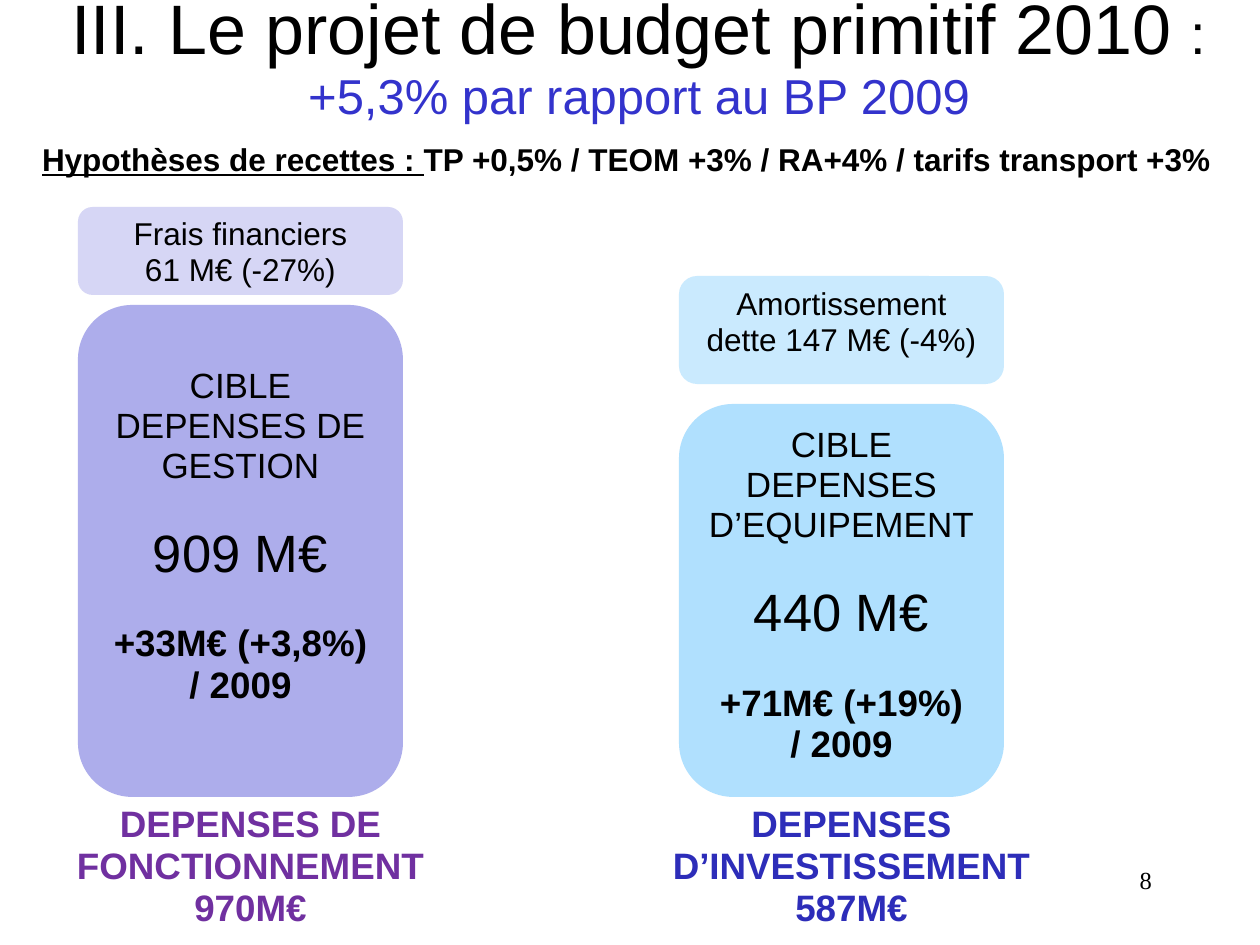
from dataclasses import dataclass

import pptx
import pptx.util
import pptx.dml.color
import pptx.enum.shapes
import pptx.enum.text

PX = 914400 / 126
ALIGN = pptx.enum.text.PP_ALIGN
ANCHOR = pptx.enum.text.MSO_ANCHOR


@dataclass(frozen=True)
class Theme:
    sans: str = "Arial"
    serif: str = "Times New Roman"
    black: str = "000000"
    subtitle: str = "3333CC"
    operating: str = "ADADEB"
    operating_light: str = "D6D6F5"
    operating_label: str = "7030A0"
    investment: str = "B0E0FE"
    investment_light: str = "CAEAFE"
    investment_label: str = "2D2DB9"
    title_size: int = 40
    colon_size: int = 32
    subtitle_size: int = 28
    amount_size: int = 30
    strong_size: int = 21
    body_size: int = 20
    small_size: int = 18
    number_size: int = 14
    line_spacing: float = 0.95
    gap: int = 22


THEME = Theme()


def px(value):
    return pptx.util.Emu(round(value * PX))


def color(value):
    return pptx.dml.color.RGBColor.from_string(value)


def set_font(font, size, rgb=THEME.black, bold=False, name=THEME.sans):
    font.name = name
    font.size = pptx.util.Pt(size)
    font.bold = bold
    font.color.rgb = color(rgb)


def prepare_frame(shape, top=6, anchor=ANCHOR.TOP):
    frame = shape.text_frame
    frame.word_wrap = True
    frame.vertical_anchor = anchor
    frame.margin_left = frame.margin_right = px(13)
    frame.margin_top, frame.margin_bottom = px(top), px(6)
    return frame


def add_text_box(slide, box, anchor=ANCHOR.TOP):
    shape = slide.shapes.add_textbox(*map(px, box))
    return prepare_frame(shape, anchor=anchor)


def add_block(slide, box, fill, top=6):
    kind = pptx.enum.shapes.MSO_SHAPE.ROUNDED_RECTANGLE
    shape = slide.shapes.add_shape(kind, *map(px, box))
    shape.shadow.inherit = False
    shape.adjustments[0] = 0.167
    shape.fill.solid()
    shape.fill.fore_color.rgb = color(fill)
    shape.line.fill.background()
    return prepare_frame(shape, top)


def add_paragraph(frame, text="", align=ALIGN.CENTER, gap=0):
    paragraph = frame.paragraphs[0]
    if paragraph.runs:
        paragraph = frame.add_paragraph()
    paragraph.alignment = align
    paragraph.line_spacing = THEME.line_spacing
    paragraph.space_before = pptx.util.Pt(gap)
    if text:
        paragraph.add_run().text = text
    return paragraph


def add_lines(frame, lines, size, rgb=THEME.black, bold=False, gap=0):
    for index, line in enumerate(lines):
        paragraph = add_paragraph(frame, line, gap=0 if index else gap)
        set_font(paragraph.font, size, rgb, bold)


def add_title(slide):
    frame = add_text_box(slide, (39, -21, 1200, 158), ANCHOR.MIDDLE)
    paragraph = add_paragraph(frame)
    for text, size, rgb in (
        ("III. Le projet de budget primitif 2010 ", THEME.title_size, THEME.black),
        (": ", THEME.colon_size, THEME.black),
        ("+5,3% par rapport au BP 2009", THEME.subtitle_size, THEME.subtitle),
    ):
        run = paragraph.add_run()
        run.text = text
        set_font(run.font, size, rgb)


def add_assumptions(slide):
    frame = add_text_box(slide, (29, 137, 1231, 49))
    paragraph = add_paragraph(frame, "Hypothèses de recettes : ", ALIGN.LEFT)
    set_font(paragraph.font, THEME.small_size, bold=True)
    paragraph.runs[0].font.underline = True
    paragraph.add_run().text = "TP +0,5% / TEOM +3% / RA+4% / tarifs transport +3%"


def add_target(slide, box, fill, heading, amount, change, top=6):
    frame = add_block(slide, box, fill, top)
    add_lines(frame, heading, THEME.body_size)
    add_lines(frame, [amount], THEME.amount_size, gap=THEME.gap)
    add_lines(frame, [change, "/ 2009"], THEME.strong_size, bold=True, gap=THEME.gap)


def add_debt(slide, box, fill, lines):
    add_lines(add_block(slide, box, fill), lines, THEME.small_size)


def add_total(slide, left, lines, rgb):
    frame = add_text_box(slide, (left, 798, 501, 140))
    add_lines(frame, lines, THEME.strong_size, rgb, bold=True)


def add_slide_number(slide):
    frame = add_text_box(slide, (903, 861, 262, 63))
    paragraph = add_paragraph(frame, "8", ALIGN.RIGHT)
    set_font(paragraph.font, THEME.number_size, name=THEME.serif)


def main():
    presentation = pptx.Presentation()
    presentation.slide_width, presentation.slide_height = px(1260), px(945)
    slide = presentation.slides.add_slide(presentation.slide_layouts[6])

    add_title(slide)
    add_assumptions(slide)
    add_target(slide, (78, 305, 325, 492), THEME.operating,
               ["CIBLE", "DEPENSES DE", "GESTION"], "909 M€", "+33M€ (+3,8%)", top=46)
    add_target(slide, (679, 404, 325, 393), THEME.investment,
               ["CIBLE DEPENSES", "D’EQUIPEMENT"], "440 M€", "+71M€ (+19%)")
    add_debt(slide, (78, 207, 325, 88), THEME.operating_light,
             ["Frais financiers", "61 M€ (-27%)"])
    add_debt(slide, (679, 276, 325, 108), THEME.investment_light,
             ["Amortissement dette 147 M€ (-4%)"])
    add_total(slide, 0, ["DEPENSES DE FONCTIONNEMENT", "970M€"], THEME.operating_label)
    add_total(slide, 601, ["DEPENSES D’INVESTISSEMENT", "587M€"], THEME.investment_label)
    add_slide_number(slide)

    presentation.save("out.pptx")


if __name__ == "__main__":
    main()
